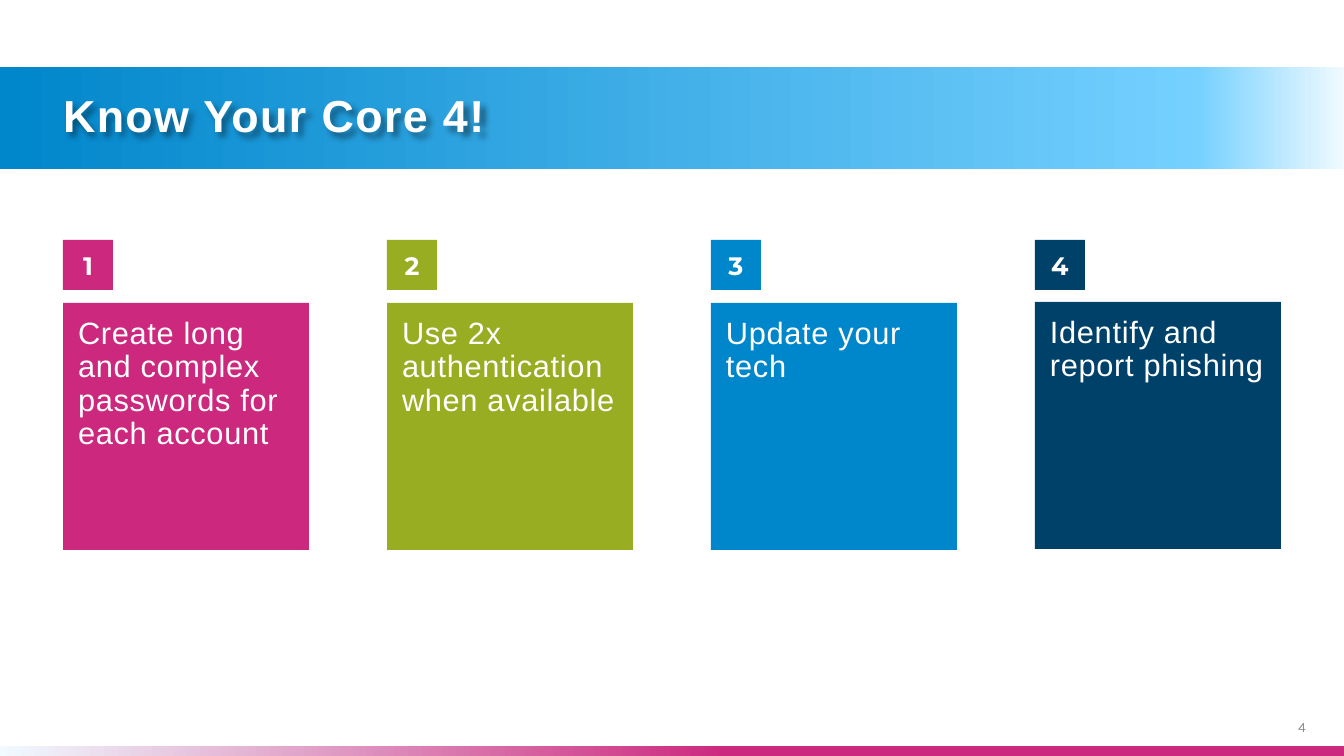
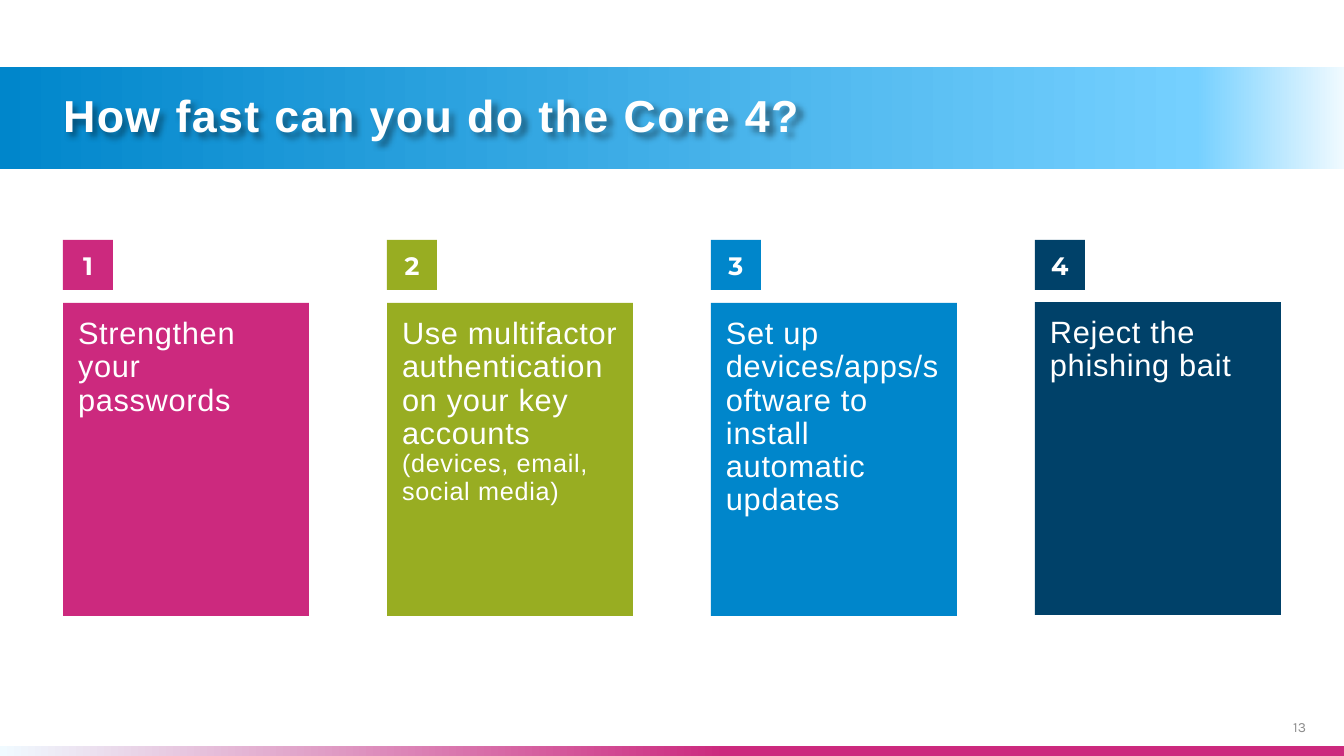
from lxml.etree import SubElement
from pptx import Presentation
from pptx.dml.color import RGBColor
from pptx.enum.shapes import MSO_SHAPE
from pptx.enum.text import MSO_ANCHOR, PP_ALIGN
from pptx.oxml import parse_xml
from pptx.oxml.ns import nsdecls, qn
from pptx.util import Pt

PX = 914400 / 100.8
SLIDE_WIDTH, SLIDE_HEIGHT = 1344, 756
MARGIN = 63
COLORS = {
    "white": "FFFFFF",
    "pale": "F0FAFF",
    "sky": "75D0FF",
    "blue": "0086CB",
    "navy": "004169",
    "pink": "CC297E",
    "green": "98AD22",
    "grey": "8C8C8C",
    "black": "000000",
}
CARD_COLORS = ["pink", "green", "blue", "navy"]
CARD_TOPS = [303, 303, 303, 302]
CARD_STEP, CARD_WIDTH, CARD_INSET = 324, 246, 15
BADGE_TOP, BADGE_SIZE = 240, 50

SLIDES = [
    {
        "title": "Know Your Core 4!",
        "number": "4",
        "card_height": 247,
        "cards": [
            ("Create long and complex passwords for each account", ""),
            ("Use 2x authentication when available", ""),
            ("Update your tech", ""),
            ("Identify and report phishing", ""),
        ],
    },
    {
        "title": "How fast can you do the Core 4?",
        "number": "13",
        "card_height": 313,
        "cards": [
            ("Strengthen your passwords", ""),
            ("Use multifactor authentication on your key accounts",
             "(devices, email, social media)"),
            ("Set up devices/apps/software to install automatic updates", ""),
            ("Reject the phishing bait", ""),
        ],
    },
]


def px(length):
    """Turn pixels into EMU."""
    return round(length * PX)


def add_rectangle(slide, box, color=None):
    """Add a borderless rectangle, filled when a colour is given."""
    shape = slide.shapes.add_shape(MSO_SHAPE.RECTANGLE, *map(px, box))
    shape.shadow.inherit = False
    shape.line.fill.background()
    if color:
        shape.fill.solid()
        shape.fill.fore_color.rgb = RGBColor.from_string(COLORS[color])
    return shape


def add_gradient_band(slide, box, stops, angle):
    """Add a full-width band with a linear gradient of (percent, colour) stops."""
    shape = add_rectangle(slide, box)
    stop_list = "".join(
        f'<a:gs pos="{percent * 1000}"><a:srgbClr val="{COLORS[color]}"/></a:gs>'
        for percent, color in stops
    )
    gradient = parse_xml(
        f'<a:gradFill rotWithShape="1" {nsdecls("a")}><a:gsLst>{stop_list}</a:gsLst>'
        f'<a:lin ang="{angle * 60000}" scaled="0"/></a:gradFill>'
    )
    shape._element.spPr.find(qn("a:prstGeom")).addnext(gradient)


def write_text(shape, text, font_name, size, color="white", bold=False, inset=0,
               anchor=MSO_ANCHOR.MIDDLE, align=PP_ALIGN.LEFT, line_spacing=None,
               tracking=0, note="", note_size=18):
    """Fill a shape with one paragraph and an optional smaller note below."""
    frame = shape.text_frame
    frame.word_wrap = True
    frame.vertical_anchor = anchor
    frame.margin_left = frame.margin_right = px(inset)
    frame.margin_top = frame.margin_bottom = px(inset)
    paragraph = frame.paragraphs[0]
    paragraph.alignment = align
    if line_spacing:
        paragraph.line_spacing = line_spacing
    paragraph.font.name = font_name
    paragraph.font.size = Pt(size)
    paragraph.font.bold = bold
    paragraph.font.color.rgb = RGBColor.from_string(COLORS[color])
    paragraph.add_run().text = text
    if note:
        paragraph.add_line_break()
        run = paragraph.add_run()
        run.text = note
        run.font.size = Pt(note_size)
    if tracking:
        for run in paragraph.runs:
            run._r.get_or_add_rPr().set("spc", str(tracking))


def add_text_shadow(shape):
    """Give the text of an unfilled box a soft shadow to the lower right."""
    effects = SubElement(shape._element.spPr, qn("a:effectLst"))
    effects.append(parse_xml(
        f'<a:outerShdw {nsdecls("a")} blurRad="50800" dist="50800" dir="2700000" '
        f'algn="tl" rotWithShape="0"><a:srgbClr val="{COLORS["black"]}">'
        f'<a:alpha val="40000"/></a:srgbClr></a:outerShdw>'
    ))


def add_header(slide, box, title):
    """Draw the title band with its title."""
    left, top, width, height = box
    add_gradient_band(slide, box, [(0, "pale"), (11, "sky"), (100, "blue")], 180)
    title_box = slide.shapes.add_textbox(
        *map(px, (left + MARGIN, top + 21, width - 185, height - 43)))
    write_text(title_box, title, "Arial", 32, bold=True, line_spacing=0.9, tracking=100)
    add_text_shadow(title_box)


def add_footer(slide, box, number):
    """Draw the bottom band and the slide number above its right end."""
    left, top, width, height = box
    add_gradient_band(slide, box, [(0, "pale"), (54, "pink")], 0)
    number_box = slide.shapes.add_textbox(
        *map(px, (left + width - 92, top - 51, 54, 40)))
    write_text(number_box, number, "Karla", 10, "grey",
               anchor=MSO_ANCHOR.BOTTOM, align=PP_ALIGN.RIGHT)


def add_card(slide, box, number, color, text, note):
    """Draw a numbered badge and the text card below it."""
    left = box[0]
    badge = add_rectangle(slide, (left, BADGE_TOP, BADGE_SIZE, BADGE_SIZE), color)
    write_text(badge, str(number), "Montserrat", 18, bold=True, align=PP_ALIGN.CENTER)
    card = add_rectangle(slide, box, color)
    write_text(card, text, "Arial", 22, inset=CARD_INSET, anchor=MSO_ANCHOR.TOP,
               line_spacing=0.9, tracking=50, note=note)


def add_core_slide(presentation, content):
    """Build one slide with header, four cards and footer."""
    slide = presentation.slides.add_slide(presentation.slide_layouts[6])
    add_header(slide, (0, 67, SLIDE_WIDTH, 102), content["title"])
    add_footer(slide, (0, 746, SLIDE_WIDTH, 10), content["number"])
    columns = zip(CARD_COLORS, CARD_TOPS, content["cards"])
    for index, (color, top, (text, note)) in enumerate(columns):
        box = (MARGIN + index * CARD_STEP, top, CARD_WIDTH, content["card_height"])
        add_card(slide, box, index + 1, color, text, note)


def main():
    """Build and save the presentation."""
    presentation = Presentation()
    presentation.slide_width = px(SLIDE_WIDTH)
    presentation.slide_height = px(SLIDE_HEIGHT)
    for content in SLIDES:
        add_core_slide(presentation, content)
    presentation.save("out.pptx")


if __name__ == "__main__":
    main()
